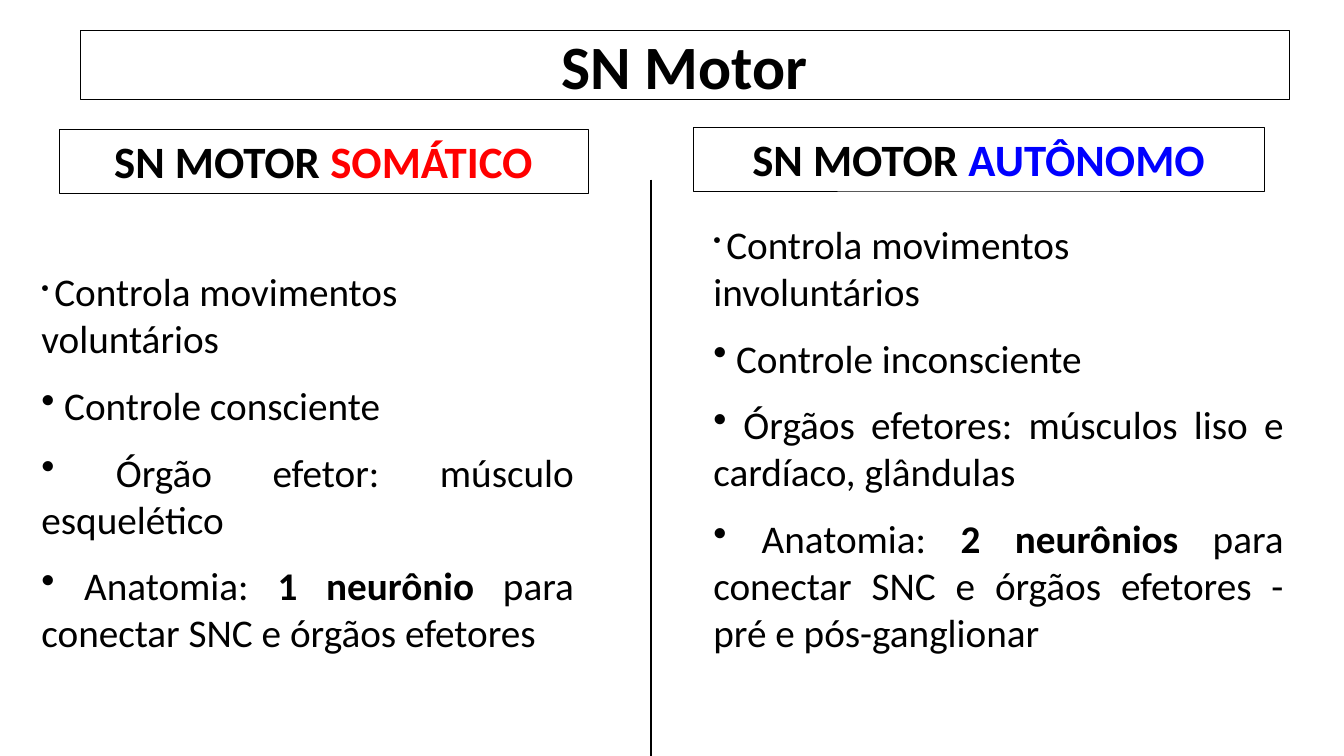
import pptx
import pptx.dml.color
import pptx.enum.shapes
import pptx.enum.text
import pptx.oxml
import pptx.oxml.ns
import pptx.util
import lxml.etree

BLACK, RED, BLUE = "000000", "FF0000", "0000FF"
ALIGN = pptx.enum.text.PP_ALIGN
ANCHOR = pptx.enum.text.MSO_ANCHOR


def px(length):
    """Turn pixels (96 per inch) into EMU."""
    return pptx.util.Emu(length * 9525)


def color(value):
    """Turn a hex string into a colour."""
    return pptx.dml.color.RGBColor.from_string(value)


def set_values(target, values):
    """Set each attribute named in a dict of format values."""
    for name, value in values.items():
        setattr(target, name, value)


class SlideBuilder:
    """Hold the style and the current slide, and add elements to it."""

    font_name = "Calibri"

    def __init__(self, presentation):
        """Start a blank slide."""
        self.slide = presentation.slides.add_slide(presentation.slide_layouts[6])

    def add_runs(self, paragraph, runs):
        """Fill a paragraph with (text, size, bold, colour) runs."""
        for text, size, bold, hex_color in runs:
            run = paragraph.add_run()
            run.text = text
            set_values(run.font, {"name": self.font_name, "size": pptx.util.Pt(size), "bold": bold})
            run.font.color.rgb = color(hex_color)

    def heading(self, box, runs, line_width, anchor):
        """Add an outlined rectangle with one centred line of text."""
        shape = self.slide.shapes.add_shape(
            pptx.enum.shapes.MSO_SHAPE.RECTANGLE, *map(px, box))
        shape.shadow.inherit = False
        shape.fill.background()
        shape.line.color.rgb = color(BLACK)
        shape.line.width = pptx.util.Pt(line_width)
        set_values(shape.text_frame, {"word_wrap": True, "vertical_anchor": anchor})
        paragraph = shape.text_frame.paragraphs[0]
        paragraph.alignment = ALIGN.CENTER
        self.add_runs(paragraph, runs)

    def bullets(self, box, items):
        """Add a text box with one bulleted paragraph per list of runs."""
        frame = self.slide.shapes.add_textbox(*map(px, box)).text_frame
        frame.word_wrap = True
        for index, runs in enumerate(items):
            paragraph = frame.add_paragraph() if index else frame.paragraphs[0]
            values = {"alignment": ALIGN.LEFT}
            if index:
                values = {"alignment": ALIGN.JUSTIFY, "space_before": pptx.util.Pt(14)}
            set_values(paragraph, values)
            bullet = lxml.etree.SubElement(
                paragraph._p.get_or_add_pPr(), pptx.oxml.ns.qn("a:buChar"))
            bullet.set("char", "•")
            self.add_runs(paragraph, runs)

    def line(self, start, end, width):
        """Add a straight black line."""
        connector = self.slide.shapes.add_connector(
            pptx.enum.shapes.MSO_CONNECTOR.STRAIGHT, *map(px, start + end))
        connector.line.color.rgb = color(BLACK)
        connector.line.width = pptx.util.Pt(width)
        lxml.etree.SubElement(connector._element.spPr, pptx.oxml.ns.qn("a:effectLst"))


COLUMNS = [
    {
        "heading": ((56, 123, 504, 61), "SOMÁTICO", RED, 0.25),
        "body": (30, 250, 526, 395),
        "control": "Controla movimentos voluntários",
        "points": [" Controle consciente", " Órgão efetor: músculo esquelético"],
        "anatomy": ("1 neurônio", " para conectar SNC e órgãos efetores"),
    },
    {
        "heading": ((660, 121, 544, 61), "AUTÔNOMO", BLUE, 0.5),
        "body": (670, 205, 562, 440),
        "control": "Controla movimentos involuntários",
        "points": [" Controle inconsciente",
                   " Órgãos efetores: músculos liso e cardíaco, glândulas"],
        "anatomy": ("2 neurônios",
                    " para conectar SNC e órgãos efetores - pré e pós-ganglionar"),
    },
]


def main():
    """Build and save the slide."""
    presentation = pptx.Presentation()
    set_values(presentation, {"slide_width": px(1280), "slide_height": px(720)})
    builder = SlideBuilder(presentation)
    builder.heading((76, 29, 1152, 66), [("SN Motor", 44, True, BLACK)], 0.25, ANCHOR.MIDDLE)
    for column in COLUMNS:
        box, system, accent, line_width = column["heading"]
        builder.heading(box, [("SN MOTOR ", 32, True, BLACK), (system, 32, True, accent)],
                        line_width, ANCHOR.TOP)
        count, purpose = column["anatomy"]
        items = [[(" ", 16, False, BLACK), (column["control"], 28, False, BLACK)]]
        items += [[(text, 28, False, BLACK)] for text in column["points"]]
        items.append([(" Anatomia: ", 28, False, BLACK), (count, 28, True, BLACK),
                      (purpose, 28, False, BLACK)])
        builder.bullets(column["body"], items)
    builder.line((620, 171), (620, 720), 0.75)
    presentation.save("out.pptx")


if __name__ == "__main__":
    main()
